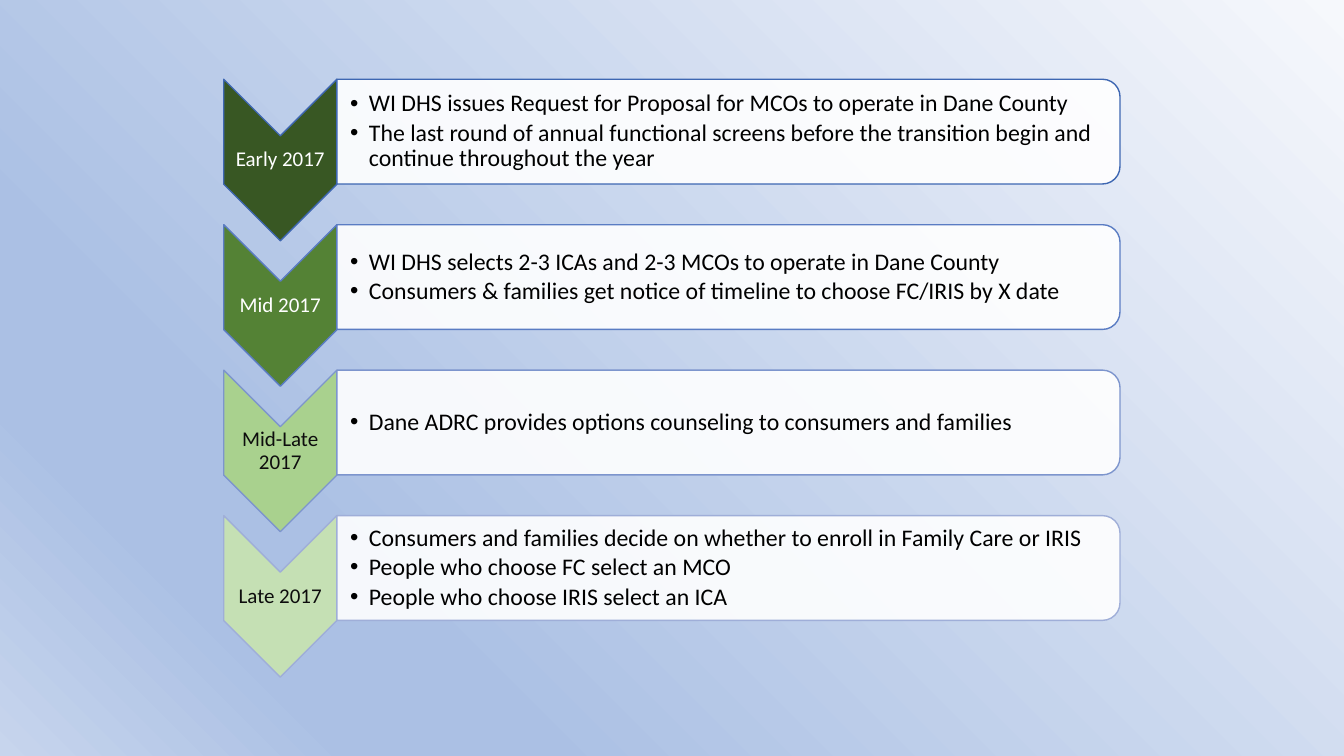
from lxml import etree
from pptx import Presentation
from pptx.dml.color import RGBColor
from pptx.enum.shapes import MSO_SHAPE as Shape
from pptx.enum.text import MSO_ANCHOR as Anchor, PP_ALIGN as Align
from pptx.oxml import parse_xml
from pptx.oxml.ns import nsdecls, qn
from pptx.util import Pt

FONT = "Calibri"
WHITE = RGBColor(0xFF, 0xFF, 0xFF)
BLACK = RGBColor(0, 0, 0)
DARK = RGBColor(0x0D, 0x0D, 0x0D)
BACKGROUND_STOPS = [
    (0, RGBColor(0xF6, 0xF8, 0xFC)),
    (74, RGBColor(0xAB, 0xC0, 0xE4)),
    (83, RGBColor(0xAB, 0xC0, 0xE4)),
    (100, RGBColor(0xC7, 0xD5, 0xED)),
]

# Layout in points
TOP, PITCH = 56.6, 103.9
CHEVRON_LEFT, CHEVRON_WIDTH, CHEVRON_HEIGHT = 159.8, 80.8, 115.4
LABEL_OFFSET, LABEL_HEIGHT = 40.4, 34.6
PANEL_LEFT = CHEVRON_LEFT + CHEVRON_WIDTH
PANEL_WIDTH, PANEL_HEIGHT = 559.4, 74.8
BODY_OFFSET, BODY_WIDTH, BODY_HEIGHT = 3.7, 555.8, 67.5
BULLET_INDENT = 13.5

# Label, label colour, chevron fill, outline, bullets
PHASES = [
    ("Early 2017", WHITE, RGBColor(0x38, 0x57, 0x23), RGBColor(0x3E, 0x67, 0xB2), [
        "WI DHS issues Request for Proposal for MCOs to operate in Dane County",
        "The last round of annual functional screens before the transition begin "
        "and continue throughout the year"]),
    ("Mid 2017", WHITE, RGBColor(0x54, 0x82, 0x35), RGBColor(0x5A, 0x7C, 0xC3), [
        "WI DHS selects 2-3 ICAs and 2-3 MCOs to operate in Dane County",
        "Consumers & families get notice of timeline to choose FC/IRIS by X date"]),
    ("Mid-Late 2017", DARK, RGBColor(0xA9, 0xD1, 0x8E), RGBColor(0x7D, 0x95, 0xCD), [
        "Dane ADRC provides options counseling to consumers and families"]),
    ("Late 2017", DARK, RGBColor(0xC5, 0xE0, 0xB4), RGBColor(0x9F, 0xAE, 0xD8), [
        "Consumers and families decide on whether to enroll in Family Care or IRIS",
        "People who choose FC select an MCO",
        "People who choose IRIS select an ICA"]),
]


def set_background(slide):
    fill = slide.background.fill
    fill.gradient()
    fill.gradient_angle = 225
    stops = "".join(
        f'<a:gs pos="{position * 1000}"><a:srgbClr val="{color}"/></a:gs>'
        for position, color in BACKGROUND_STOPS)
    old_list = next(slide.background._cSld.iter(qn("a:gsLst")))
    old_list.getparent().replace(
        old_list, parse_xml(f'<a:gsLst {nsdecls("a")}>{stops}</a:gsLst>'))


def add_turned_shape(slide, kind, left, top, width, height, fill, outline):
    """Add a shape turned by 90 degrees that shows in the given box."""
    shape = slide.shapes.add_shape(
        kind, Pt(left + (width - height) / 2), Pt(top + (height - width) / 2),
        Pt(height), Pt(width))
    shape.rotation = 90
    shape.shadow.inherit = False
    shape.fill.solid()
    shape.fill.fore_color.rgb = fill
    shape.line.color.rgb = outline
    shape.line.width = Pt(1)
    return shape


def set_opacity(shape, percent):
    color = shape._element.spPr.find(qn("a:solidFill")).find(qn("a:srgbClr"))
    etree.SubElement(color, qn("a:alpha")).set("val", str(percent * 1000))


def add_text(slide, left, top, width, height, inset):
    frame = slide.shapes.add_textbox(Pt(left), Pt(top), Pt(width), Pt(height)).text_frame
    frame.word_wrap = True
    frame.vertical_anchor = Anchor.MIDDLE
    frame.margin_left = Pt(inset)
    frame.margin_top = frame.margin_right = frame.margin_bottom = Pt(0.8)
    return frame


def write(paragraph, text, size, color, space_after):
    paragraph.line_spacing = 0.9
    paragraph.space_after = Pt(space_after)
    run = paragraph.add_run()
    run.text = text
    run.font.name = FONT
    run.font.size = Pt(size)
    run.font.color.rgb = color


def set_bullet(paragraph):
    paragraph.level = 1
    properties = paragraph._p.get_or_add_pPr()
    properties.set("marL", str(Pt(BULLET_INDENT)))
    properties.set("indent", str(-Pt(BULLET_INDENT)))
    etree.SubElement(properties, qn("a:buFont")).set("typeface", "Arial")
    etree.SubElement(properties, qn("a:buChar")).set("char", "•")


def add_phase(slide, top, label, label_color, fill, outline, bullets):
    # Chevron with its label
    add_turned_shape(slide, Shape.CHEVRON, CHEVRON_LEFT, top,
                     CHEVRON_WIDTH, CHEVRON_HEIGHT, fill, outline)
    frame = add_text(slide, CHEVRON_LEFT, top + LABEL_OFFSET,
                     CHEVRON_WIDTH, LABEL_HEIGHT, 0.8)
    frame.paragraphs[0].alignment = Align.CENTER
    write(frame.paragraphs[0], label, 15, label_color, 5.25)

    # Panel with its bullets
    panel = add_turned_shape(slide, Shape.ROUND_2_SAME_RECTANGLE, PANEL_LEFT, top,
                             PANEL_WIDTH, PANEL_HEIGHT, WHITE, outline)
    set_opacity(panel, 90)
    frame = add_text(slide, PANEL_LEFT, top + BODY_OFFSET, BODY_WIDTH, BODY_HEIGHT, 9.4)
    for index, text in enumerate(bullets):
        paragraph = frame.add_paragraph() if index else frame.paragraphs[0]
        write(paragraph, text, 17, BLACK, 2.55)
        set_bullet(paragraph)


def main():
    presentation = Presentation()
    presentation.slide_width, presentation.slide_height = Pt(960), Pt(540)
    slide = presentation.slides.add_slide(presentation.slide_layouts[6])
    set_background(slide)
    for index, phase in enumerate(PHASES):
        add_phase(slide, TOP + index * PITCH, *phase)
    presentation.save("out.pptx")


if __name__ == "__main__":
    main()
